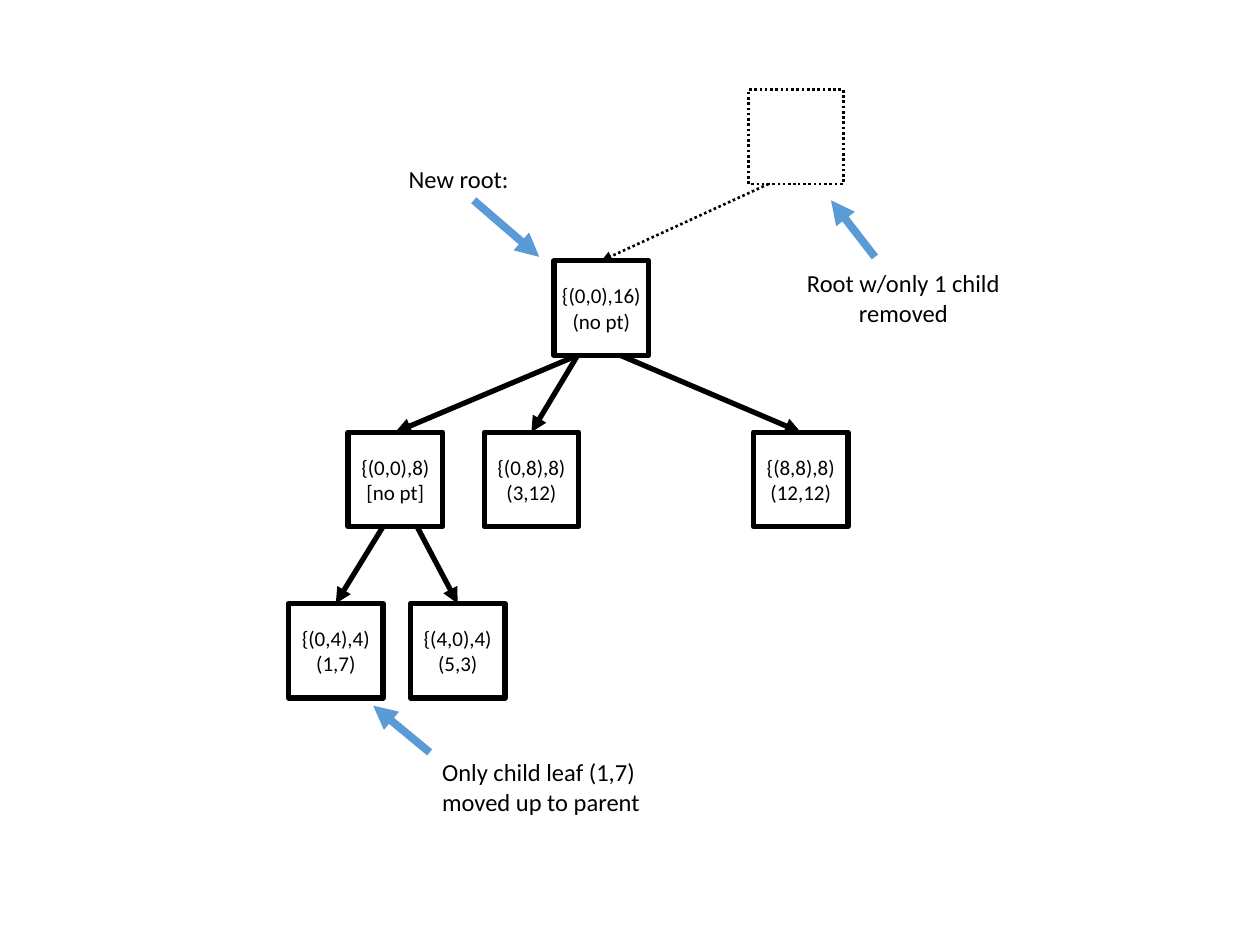
import pptx
import pptx.dml.color
import pptx.enum.dml
import pptx.enum.shapes
import pptx.enum.text
import pptx.oxml
import pptx.oxml.ns
import pptx.util

BLACK, WHITE, BLUE = "000000", "FFFFFF", "5B9BD5"
FONT = "Calibri"
DOTTED = pptx.enum.dml.MSO_LINE.ROUND_DOT
CENTER = pptx.enum.text.PP_ALIGN.CENTER
LEFT = pptx.enum.text.PP_ALIGN.LEFT

SLIDE_SIZE = (10, 7.5)
TREE_BOX = (2.29, 0.71, 4.44, 4.83)
COLUMNS, LEVELS = 5.92, 4  # tree width in node widths, number of levels

# name: (column, level, text)
NODES = {
    "new root": (2.81, 1, "{(0,0),16)\v(no pt)"),
    "inner": (0.63, 2, "{(0,0),8)\v[no pt]"),
    "upper left": (2.07, 2, "{(0,8),8)\v(3,12)"),
    "upper right": (4.92, 2, "{(8,8),8)\v(12,12)"),
    "moved leaf": (0, 3, "{(0,4),4)\v(1,7)"),
    "right leaf": (1.29, 3, "{(4,0),4)\v(5,3)"),
    "old root": (4.87, 0, ""),
}
# parent, child, where the edge leaves the parent's bottom side
EDGES = [
    ("old root", "new root", 0.21),
    ("new root", "inner", 0.25),
    ("new root", "upper right", 0.7),
    ("new root", "upper left", 0.25),
    ("inner", "moved leaf", 0.37),
    ("inner", "right leaf", 0.73),
]
# text, box, alignment, arrow start and tip as shares of the box
CALLOUTS = [
    ("Only child leaf (1,7)\vmoved up to parent", (3.41, 5.96, 1.79, 0.57),
     LEFT, (0, 0.02), (-0.25, -0.63)),
    ("Root w/only 1 child\vremoved", (6.3, 2.08, 1.74, 0.57),
     CENTER, (0.37, -0.07), (0.17, -0.86)),
    ("New root:", (3.14, 1.25, 1, 0.34),
     CENTER, (0.62, 1), (1.14, 2.32)),
]


def inches(*lengths):
    return [pptx.util.Inches(length) for length in lengths]


def color(hex_value):
    return pptx.dml.color.RGBColor.from_string(hex_value)


def style_line(line, hex_value, width, dash=None):
    line.color.rgb = color(hex_value)
    line.width = pptx.util.Pt(width)
    if dash:
        line.dash_style = dash


def write(text_frame, text, size, alignment):
    text_frame.text = text
    paragraph = text_frame.paragraphs[0]
    paragraph.alignment = alignment
    for run in paragraph.runs:
        run.font.name = FONT
        run.font.size = pptx.util.Pt(size)
        run.font.color.rgb = color(BLACK)


def add_arrow(slide, start, tip, hex_value, width, dash=None):
    connector = slide.shapes.add_connector(
        pptx.enum.shapes.MSO_CONNECTOR.STRAIGHT, *inches(*start, *tip))
    style_line(connector.line, hex_value, width, dash)
    line_xml = connector.line._get_or_add_ln()
    head = pptx.oxml.parse_xml(
        f'<a:tailEnd {pptx.oxml.ns.nsdecls("a")} type="triangle"/>')
    line_xml.append(head)
    line_xml.addnext(pptx.oxml.parse_xml(
        f'<a:effectLst {pptx.oxml.ns.nsdecls("a")}/>'))
    return connector


def add_node(slide, box, text):
    """Draw a square node; a node without text is a removed one, dotted."""
    shape = slide.shapes.add_shape(
        pptx.enum.shapes.MSO_SHAPE.RECTANGLE, *inches(*box))
    shape.shadow.inherit = False
    shape.fill.solid()
    shape.fill.fore_color.rgb = color(WHITE)
    if not text:
        style_line(shape.line, BLACK, 1.5, DOTTED)
        return shape
    style_line(shape.line, BLACK, 3)
    frame = shape.text_frame
    frame.margin_left = frame.margin_right = 0
    frame.margin_top = frame.margin_bottom = 0
    frame.vertical_anchor = pptx.enum.text.MSO_ANCHOR.MIDDLE
    write(frame, text, 12, CENTER)
    return shape


def add_tree(slide, box):
    left, top, width, height = box
    side = width / COLUMNS
    pitch = (height - side) / (LEVELS - 1)
    shapes, corners = {}, {}
    for name, (column, level, text) in NODES.items():
        x, y = corners[name] = left + column * side, top + level * pitch
        shapes[name] = add_node(slide, (x, y, side, side), text)
    for parent, child, share in EDGES:
        x, y = corners[parent]
        child_x, child_y = corners[child]
        width, dash = (3, None) if NODES[parent][2] else (1.5, DOTTED)
        edge = add_arrow(slide, (x + share * side, y + side),
                         (child_x + side / 2, child_y), BLACK, width, dash)
        edge.end_connect(shapes[child], 0)


def add_callout(slide, text, box, alignment, start, tip):
    left, top, width, height = box
    text_box = slide.shapes.add_textbox(*inches(*box))
    frame = text_box.text_frame
    frame.word_wrap = False
    frame.auto_size = pptx.enum.text.MSO_AUTO_SIZE.SHAPE_TO_FIT_TEXT
    write(frame, text, 14, alignment)
    ends = [(left + x * width, top + y * height) for x, y in (start, tip)]
    add_arrow(slide, *ends, BLUE, 4.5)


def main():
    presentation = pptx.Presentation()
    presentation.slide_width, presentation.slide_height = inches(*SLIDE_SIZE)
    slide = presentation.slides.add_slide(presentation.slide_layouts[6])
    add_tree(slide, TREE_BOX)
    for callout in CALLOUTS:
        add_callout(slide, *callout)
    presentation.save("out.pptx")


if __name__ == "__main__":
    main()
